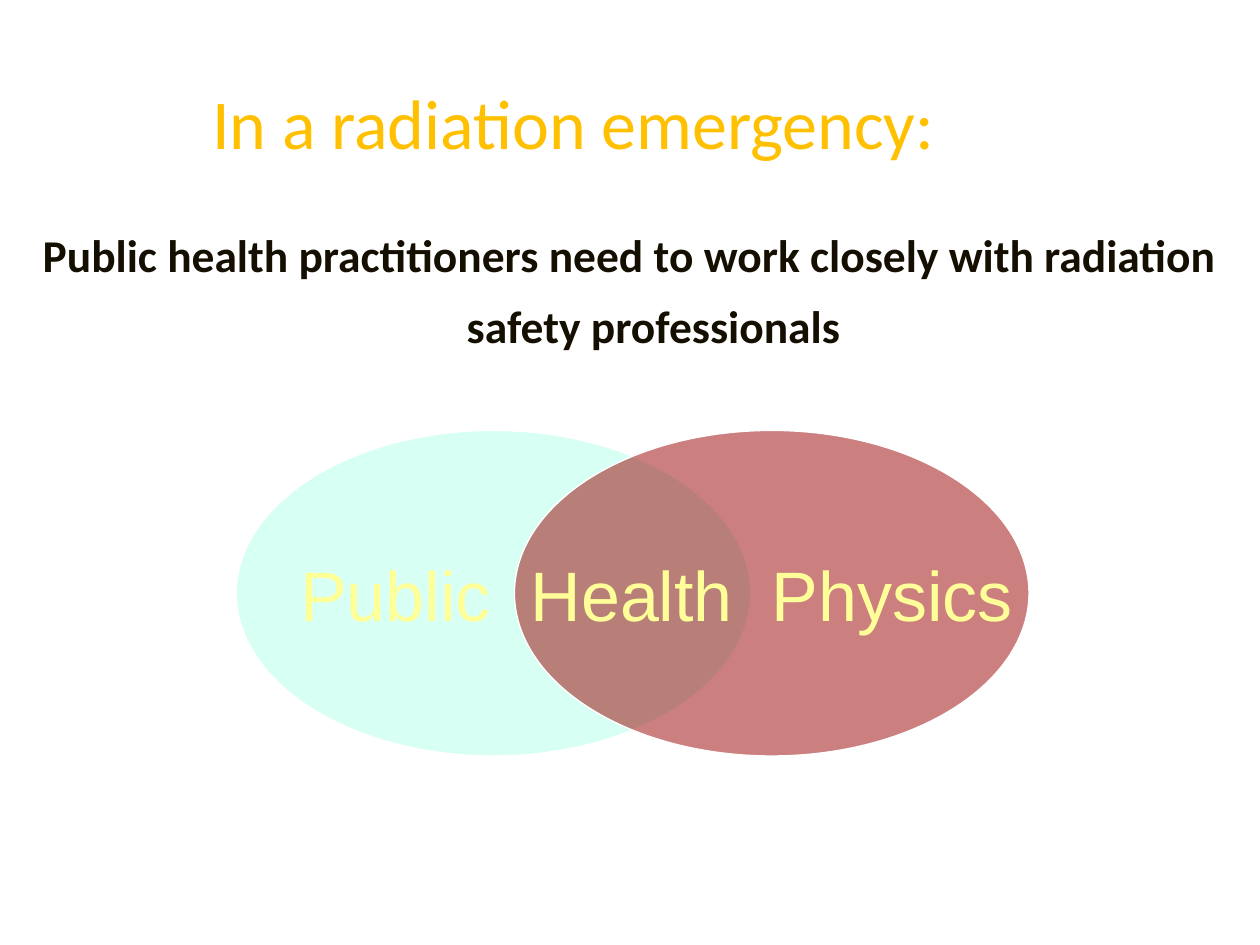
import pptx
import pptx.dml.color
import pptx.enum.shapes
import pptx.enum.text
import pptx.oxml.ns
import pptx.util
from lxml import etree

Pt = pptx.util.Pt
ALIGN = pptx.enum.text.PP_ALIGN
ANCHOR = pptx.enum.text.MSO_ANCHOR

# Content
TITLE = "In a radiation emergency:"
MESSAGE = "Public health practitioners need to work closely with radiation safety professionals"
LABEL = {"size": 40, "font": "Arial", "color": "FFFF99"}
FIELD_COLORS = ["B2FFE8", "990000"]

# Layout in points
TITLE_BOX = (114, 42, 522, 90)
BODY_BOX = (0, 117, 720, 356)
FIELD_LEFT, FIELD_TOP, FIELD_WIDTH, FIELD_HEIGHT = 135, 246, 294, 186
FIELD_STEP = 159
PUBLIC_LEFT, PUBLIC_WIDTH = 161, 130
WORD_GAP = 11.1  # added to the space between the words


def rgb(value):
    return pptx.dml.color.RGBColor.from_string(value)


def place(shape, left, top, width, height):
    shape.left, shape.top = Pt(left), Pt(top)
    shape.width, shape.height = Pt(width), Pt(height)


def add_span(para, text, size, font, color, bold=False):
    span = para.add_run()
    span.text = text
    span.font.size, span.font.name, span.font.bold = Pt(size), font, bold
    span.font.color.rgb = rgb(color)
    return span


def center_label(shape):
    frame = shape.text_frame
    frame.word_wrap = False
    frame.vertical_anchor = ANCHOR.MIDDLE
    para = frame.paragraphs[0]
    para.alignment = ALIGN.CENTER
    return para


def add_field(shapes, left, color):
    field = shapes.add_shape(pptx.enum.shapes.MSO_SHAPE.OVAL, Pt(left), Pt(FIELD_TOP),
                             Pt(FIELD_WIDTH), Pt(FIELD_HEIGHT))
    field.shadow.inherit = False
    field.fill.solid()
    field.fill.fore_color.rgb = rgb(color)
    tint = field.fill._xPr.find(".//" + pptx.oxml.ns.qn("a:srgbClr"))
    etree.SubElement(tint, pptx.oxml.ns.qn("a:alpha"), val="50000")
    field.line.color.rgb = rgb("FFFFFF")
    field.line.width = Pt(0.75)
    return field


deck = pptx.Presentation()
deck.slide_width, deck.slide_height = Pt(720), Pt(540)
page = deck.slides.add_slide(deck.slide_layouts[1])

# Title
title = page.shapes.title
place(title, *TITLE_BOX)
title.text_frame.vertical_anchor = ANCHOR.TOP
para = title.text_frame.paragraphs[0]
para.alignment = ALIGN.LEFT
add_span(para, TITLE, 40, "Calibri", "FFC000")

# Message
body = page.placeholders[1]
place(body, *BODY_BOX)
para = body.text_frame.paragraphs[0]
para.alignment = ALIGN.CENTER
para.line_spacing = 1.3
para.space_before = Pt(0)
properties = para._p.get_or_add_pPr()
properties.set("marL", str(Pt(27)))
properties.set("indent", str(Pt(-27)))
etree.SubElement(properties, pptx.oxml.ns.qn("a:buNone"))
add_span(para, MESSAGE, 26, "Calibri", "140F00", bold=True)

# Overlapping fields
venn = page.shapes.add_group_shape()
fields = [add_field(venn.shapes, FIELD_LEFT + i * FIELD_STEP, color)
          for i, color in enumerate(FIELD_COLORS)]

# Labels: "Health" lies in the overlap and is shared by both fields
para = center_label(fields[1])
add_span(para, "Health", **LABEL)
gap = add_span(para, " ", **LABEL)
gap.font._element.set("spc", str(round(WORD_GAP * 100)))
add_span(para, "Physics", **LABEL)

public = page.shapes.add_textbox(Pt(PUBLIC_LEFT), Pt(FIELD_TOP), Pt(PUBLIC_WIDTH), Pt(FIELD_HEIGHT))
add_span(center_label(public), "Public", **LABEL)

deck.save("out.pptx")
